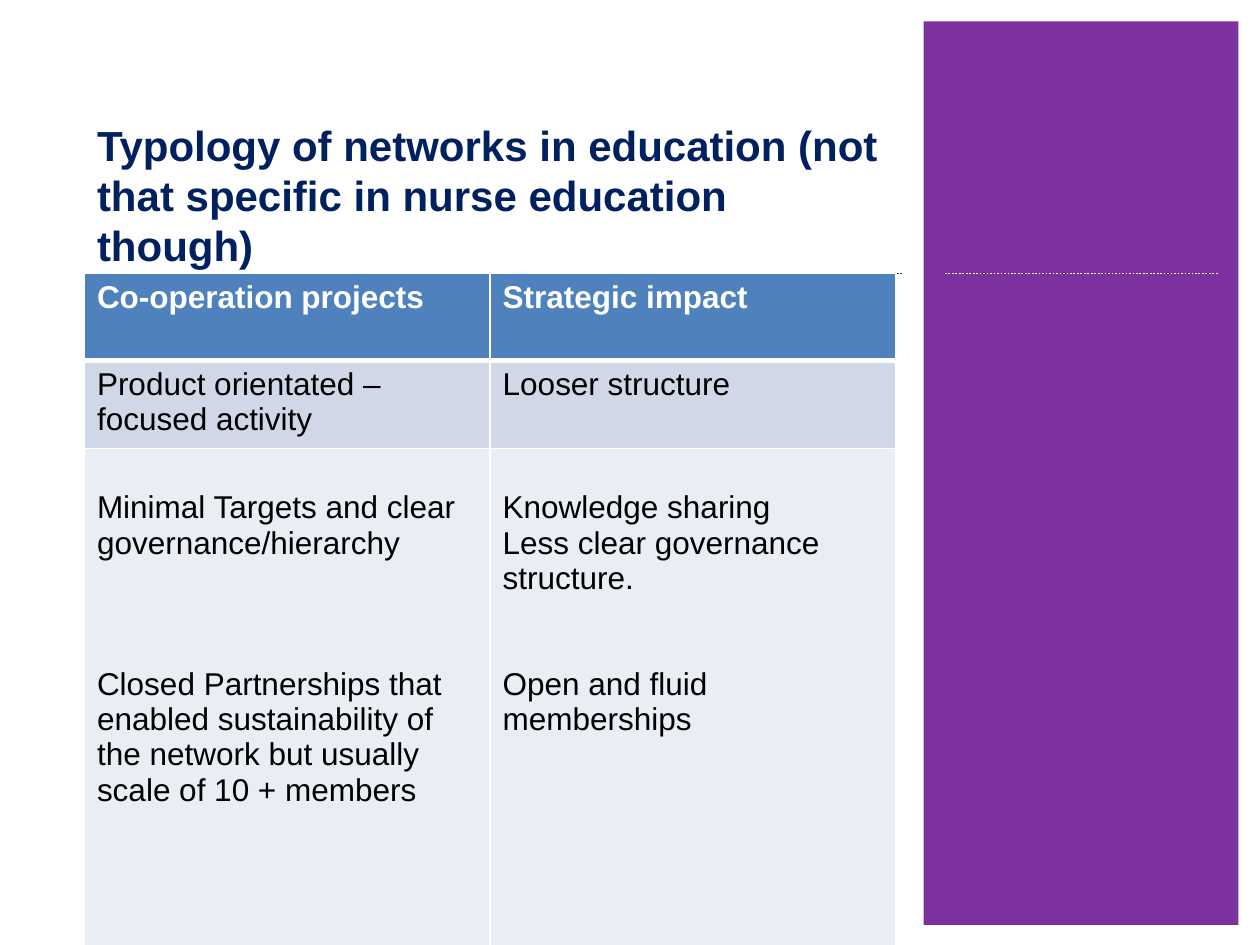
"""Build a slide comparing two types of education network."""
import pptx
import pptx.dml.color
import pptx.enum.dml
import pptx.enum.shapes
import pptx.enum.text
import pptx.oxml
import pptx.oxml.ns
import pptx.util
from pptx.util import Inches

COLORS = {
    "white": "FFFFFF",
    "black": "000000",
    "purple": "7D319F",
    "navy": "0A2160",
    "title": "002060",
    "header": "4F81BD",
    "band": "D0D8E8",
    "pale": "E9EDF4",
}
LEFT, TOP = 0.67, 2.17
LINE_PT = 20.2
RULES = [
    ((LEFT, TOP), (LEFT, 6), "navy"),
    ((LEFT, TOP), (7.17, TOP), "navy"),
    ((7.5, TOP), (9.67, TOP), "white"),
]
ROWS = [
    {"height": 0.69, "fill": "header", "color": "white", "bold": True, "inset": 0.05,
     "cells": [[("Co-operation projects", 0)], [("Strategic impact", 0)]]},
    {"height": 0.69, "fill": "band", "color": "black", "bold": False, "inset": 0.05,
     "cells": [[("Product orientated – focused activity", 0)],
               [("Looser structure", 0)]]},
    {"height": 4.01, "fill": "pale", "color": "black", "bold": False, "inset": 0.33,
     "cells": [[("Minimal Targets and clear governance/hierarchy", 0),
                ("Closed Partnerships that enabled sustainability of the network "
                 "but usually scale of 10 + members", 3)],
               [("Knowledge sharing", 0),
                ("Less clear governance structure.", 0),
                ("Open and fluid memberships", 2)]]},
]


def rgb(name):
    """Return the named colour."""
    return pptx.dml.color.RGBColor.from_string(COLORS[name])


def write(paragraph, text, size=18, color="black", bold=False, before=0):
    """Put formatted text in a paragraph."""
    run = paragraph.add_run()
    run.text = text
    run.font.name = "Arial"
    run.font.size = pptx.util.Pt(size)
    run.font.bold = bold
    run.font.color.rgb = rgb(color)
    if before:
        paragraph.space_before = pptx.util.Pt(before)


def add_panel(slide):
    """Draw the purple side panel."""
    panel = slide.shapes.add_shape(
        pptx.enum.shapes.MSO_SHAPE.RECTANGLE,
        Inches(7.33), Inches(0.17), Inches(2.5), Inches(7.17))
    panel.shadow.inherit = False
    panel.fill.solid()
    panel.fill.fore_color.rgb = rgb("purple")
    panel.line.fill.background()


def add_rule(slide, start, end, color):
    """Draw a dotted rule between two points."""
    rule = slide.shapes.add_connector(
        pptx.enum.shapes.MSO_CONNECTOR.STRAIGHT,
        *(Inches(value) for value in start + end))
    rule.line.color.rgb = rgb(color)
    rule.line.width = pptx.util.Pt(1)
    rule.line.dash_style = pptx.enum.dml.MSO_LINE.ROUND_DOT
    pptx.oxml.ns.qn("a:effectLst")
    rule._element.spPr.append(pptx.oxml.parse_xml(
        f"<a:effectLst {pptx.oxml.ns.nsdecls('a')}/>"))


def add_borders(cell, bottom):
    """Give a cell white borders with its own bottom width."""
    widths = {"lnL": 1, "lnR": 1, "lnT": 1, "lnB": bottom}
    for index, (side, width) in enumerate(widths.items()):
        border = pptx.oxml.parse_xml(
            f"<a:{side} {pptx.oxml.ns.nsdecls('a')} w=\"{pptx.util.Pt(width)}\">"
            f"<a:solidFill><a:srgbClr val=\"{COLORS['white']}\"/></a:solidFill>"
            f"</a:{side}>")
        cell._tc.get_or_add_tcPr().insert(index, border)


def add_comparison(slide):
    """Fill the table that compares the two network types."""
    table = slide.shapes.add_table(
        len(ROWS), 2, Inches(LEFT), Inches(TOP), Inches(6.44),
        Inches(sum(row["height"] for row in ROWS))).table
    for index, row in enumerate(ROWS):
        table.rows[index].height = Inches(row["height"])
        for cell, entries in zip(table.rows[index].cells, row["cells"]):
            cell.fill.solid()
            cell.fill.fore_color.rgb = rgb(row["fill"])
            cell.margin_top = Inches(row["inset"])
            add_borders(cell, 3 if index == 0 else 1)
            for number, (text, gap) in enumerate(entries):
                frame = cell.text_frame
                paragraph = frame.add_paragraph() if number else frame.paragraphs[0]
                write(paragraph, text, color=row["color"], bold=row["bold"],
                      before=gap * LINE_PT)


def add_title(slide):
    """Place and format the slide title."""
    title = slide.shapes.title
    title.left, title.top = Inches(LEFT), Inches(0.89)
    title.width, title.height = Inches(6.5), Inches(1.31)
    frame = title.text_frame
    frame.word_wrap = True
    frame.auto_size = pptx.enum.text.MSO_AUTO_SIZE.SHAPE_TO_FIT_TEXT
    frame.vertical_anchor = pptx.enum.text.MSO_ANCHOR.MIDDLE
    heading = frame.paragraphs[0]
    heading.alignment = pptx.enum.text.PP_ALIGN.LEFT
    write(heading, "Typology of networks in education (not that specific in "
          "nurse education though)", size=24, color="title", bold=True)


def main():
    """Build and save the slide."""
    deck = pptx.Presentation()
    deck.slide_width, deck.slide_height = Inches(10), Inches(7.5)
    slide = deck.slides.add_slide(deck.slide_layouts[5])
    add_panel(slide)
    for start, end, color in RULES:
        add_rule(slide, start, end, color)
    add_comparison(slide)
    add_title(slide)
    deck.save("out.pptx")


if __name__ == "__main__":
    main()
